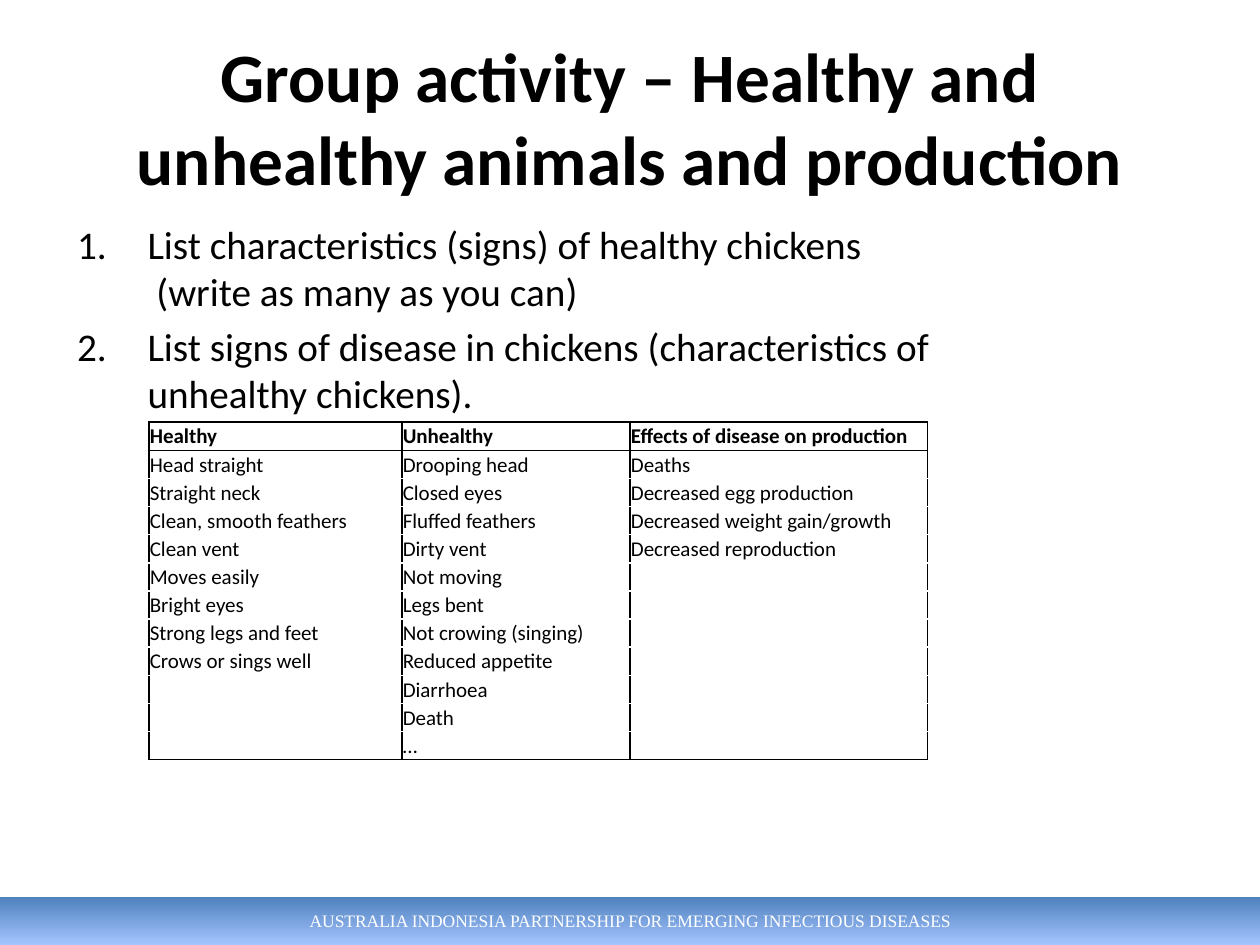
from dataclasses import dataclass
from itertools import zip_longest

from lxml import etree
from pptx import Presentation, util as u
from pptx.dml import color
from pptx.enum import shapes, text
from pptx.oxml import ns

COLORS = {
    "black": "000000",
    "white": "FFFFFF",
    "bar_top": "4F81BD",
    "bar_bottom": "A4C4FF",
}
FONT = "Calibri"
LIST_INDENT = u.Cm(1.42)
CELL_SIZE = 12
HARD_SPACE = chr(160)


@dataclass
class Area:
    left: float
    top: float
    width: float
    height: float

    def lengths(self) -> list:
        return [u.Cm(n) for n in (self.left, self.top, self.width, self.height)]


@dataclass
class Column:
    heading: str
    width: float
    entries: list[str]


TITLE = "Group activity – Healthy and unhealthy animals and production"
TASKS = [
    f"List characteristics (signs) of healthy chickens {HARD_SPACE}(write as many as you can)",
    "List signs of disease in chickens (characteristics of unhealthy chickens).",
]
FOOTER = "AUSTRALIA INDONESIA PARTNERSHIP FOR EMERGING INFECTIOUS DISEASES"
COLUMNS = [
    Column("Healthy", 5.1, [
        "Head straight", "Straight neck", "Clean, smooth feathers", "Clean vent",
        "Moves easily", "Bright eyes", "Strong legs and feet", "Crows or sings well",
    ]),
    Column("Unhealthy", 4.6, [
        "Drooping head", "Closed eyes", "Fluffed feathers", "Dirty vent",
        "Not moving", "Legs bent", "Not crowing (singing)", "Reduced appetite",
        "Diarrhoea", "Death", "…",
    ]),
    Column("Effects of disease on production", 6.0, [
        "Deaths", "Decreased egg production", "Decreased weight gain/growth",
        "Decreased reproduction",
    ]),
]


def rgb(name: str) -> color.RGBColor:
    return color.RGBColor.from_string(COLORS[name])


def style(item, size: float, name: str = FONT, ink: str = "black", bold: bool = False) -> None:
    font = item.font
    font.name, font.size, font.bold = name, u.Pt(size), bold
    font.color.rgb = rgb(ink)


def place(shape, area: Area) -> None:
    shape.left, shape.top, shape.width, shape.height = area.lengths()


def fill_title(box, area: Area) -> None:
    place(box, area)
    frame = box.text_frame
    frame.text = TITLE
    frame.auto_size = text.MSO_AUTO_SIZE.NONE
    frame.vertical_anchor = text.MSO_ANCHOR.MIDDLE
    para = frame.paragraphs[0]
    para.alignment = text.PP_ALIGN.CENTER
    style(para, 39.6, bold=True)


def fill_tasks(box, area: Area) -> None:
    place(box, area)
    frame = box.text_frame
    frame.text = "\n".join(TASKS)
    frame.auto_size = text.MSO_AUTO_SIZE.NONE
    for number, para in enumerate(frame.paragraphs):
        para.space_before = u.Pt(4.5 if number else 0)
        props = para._p.get_or_add_pPr()
        props.set("marL", str(LIST_INDENT))
        props.set("indent", str(-LIST_INDENT))
        etree.SubElement(props, ns.qn("a:buFont"), typeface="+mj-lt")
        etree.SubElement(props, ns.qn("a:buAutoNum"), type="arabicPeriod")
        style(para, 22.4)


def add_footer(slide, area: Area) -> None:
    bar = slide.shapes.add_shape(shapes.MSO_SHAPE.RECTANGLE, *area.lengths())
    bar.shadow.inherit = False
    bar.line.fill.background()
    bar.fill.gradient()
    bar.fill.gradient_angle = 270
    for stop, name in zip(bar.fill.gradient_stops, ("bar_top", "bar_bottom")):
        stop.color.rgb = rgb(name)
    frame = bar.text_frame
    frame.text = FOOTER
    frame.vertical_anchor = text.MSO_ANCHOR.MIDDLE
    frame.paragraphs[0].alignment = text.PP_ALIGN.CENTER
    style(frame.paragraphs[0], 10, "Times New Roman", "white")


def set_border(cell, side: str, name: str) -> None:
    line = etree.SubElement(cell._tc.get_or_add_tcPr(), ns.qn(f"a:ln{side}"), w=str(u.Pt(1)))
    fill = etree.SubElement(line, ns.qn("a:solidFill"))
    etree.SubElement(fill, ns.qn("a:srgbClr"), val=COLORS[name])


def fill_cell(cell, words: str, row: int, last: int) -> None:
    cell.margin_left = cell.margin_right = cell.margin_top = u.Cm(0.02)
    cell.margin_bottom = 0
    cell.vertical_anchor = text.MSO_ANCHOR.MIDDLE
    set_border(cell, "L", "black")
    set_border(cell, "R", "black")
    set_border(cell, "T", "black" if row <= 1 else "white")
    set_border(cell, "B", "black" if row in (0, last) else "white")
    cell.fill.solid()
    cell.fill.fore_color.rgb = rgb("white")
    para = cell.text_frame.paragraphs[0]
    if words:
        span = para.add_run()
        span.text = words
        style(span, CELL_SIZE, bold=row == 0)
    else:
        etree.SubElement(para._p, ns.qn("a:endParaRPr"), sz=str(CELL_SIZE * 100))


def add_signs_table(slide, area: Area) -> None:
    rows = [[column.heading for column in COLUMNS]]
    rows += zip_longest(*(column.entries for column in COLUMNS), fillvalue="")
    table = slide.shapes.add_table(len(rows), len(COLUMNS), *area.lengths()).table
    for table_column, column in zip(table.columns, COLUMNS):
        table_column.width = u.Cm(column.width)
    for index, entries in enumerate(rows):
        table.rows[index].height = u.Cm(area.height / len(rows))
        for cell, words in zip(table.rows[index].cells, entries):
            fill_cell(cell, words, index, len(rows) - 1)


def main() -> None:
    deck = Presentation()
    deck.slide_width, deck.slide_height = u.Cm(25.4), u.Cm(19.05)
    slide = deck.slides.add_slide(deck.slide_layouts[1])
    add_footer(slide, Area(0, 18.08, 25.4, 0.97))
    fill_title(slide.shapes.title, Area(1.27, 0.76, 22.86, 3.18))
    fill_tasks(slide.placeholders[1], Area(1.3, 4.32, 17.8, 3.81))
    add_signs_table(slide, Area(3, 8.51, 15.7, 6.81))
    deck.save("out.pptx")


if __name__ == "__main__":
    main()
